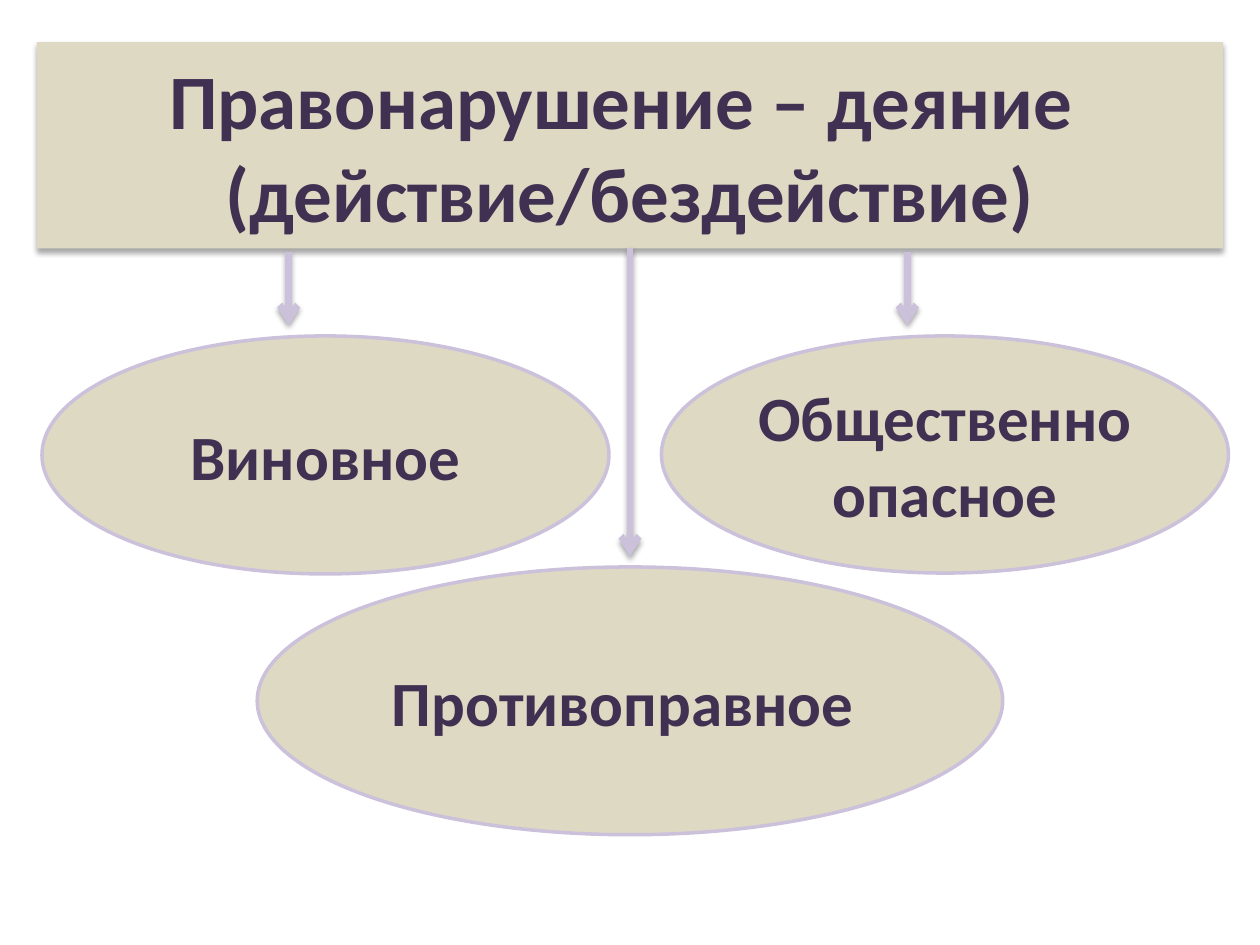
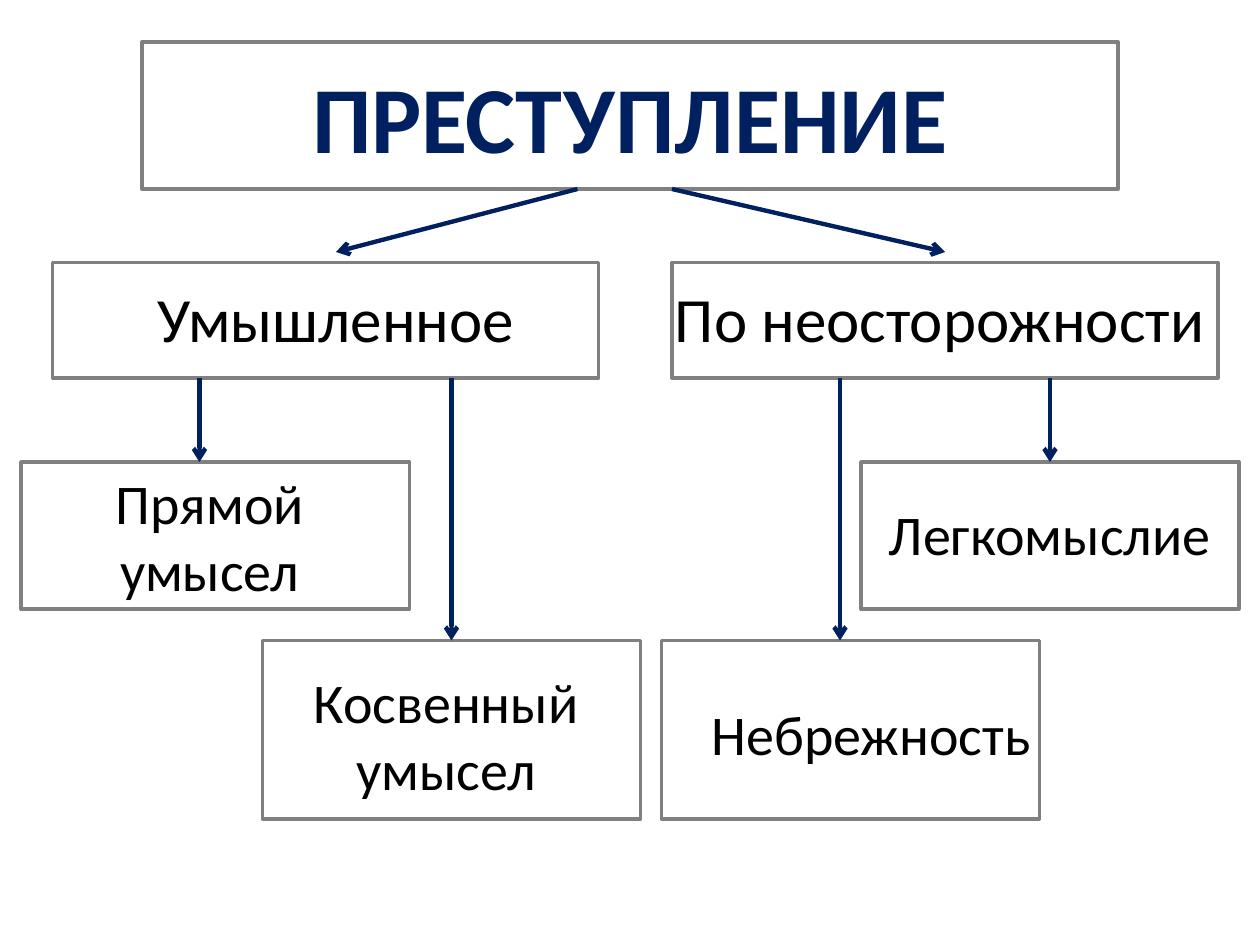
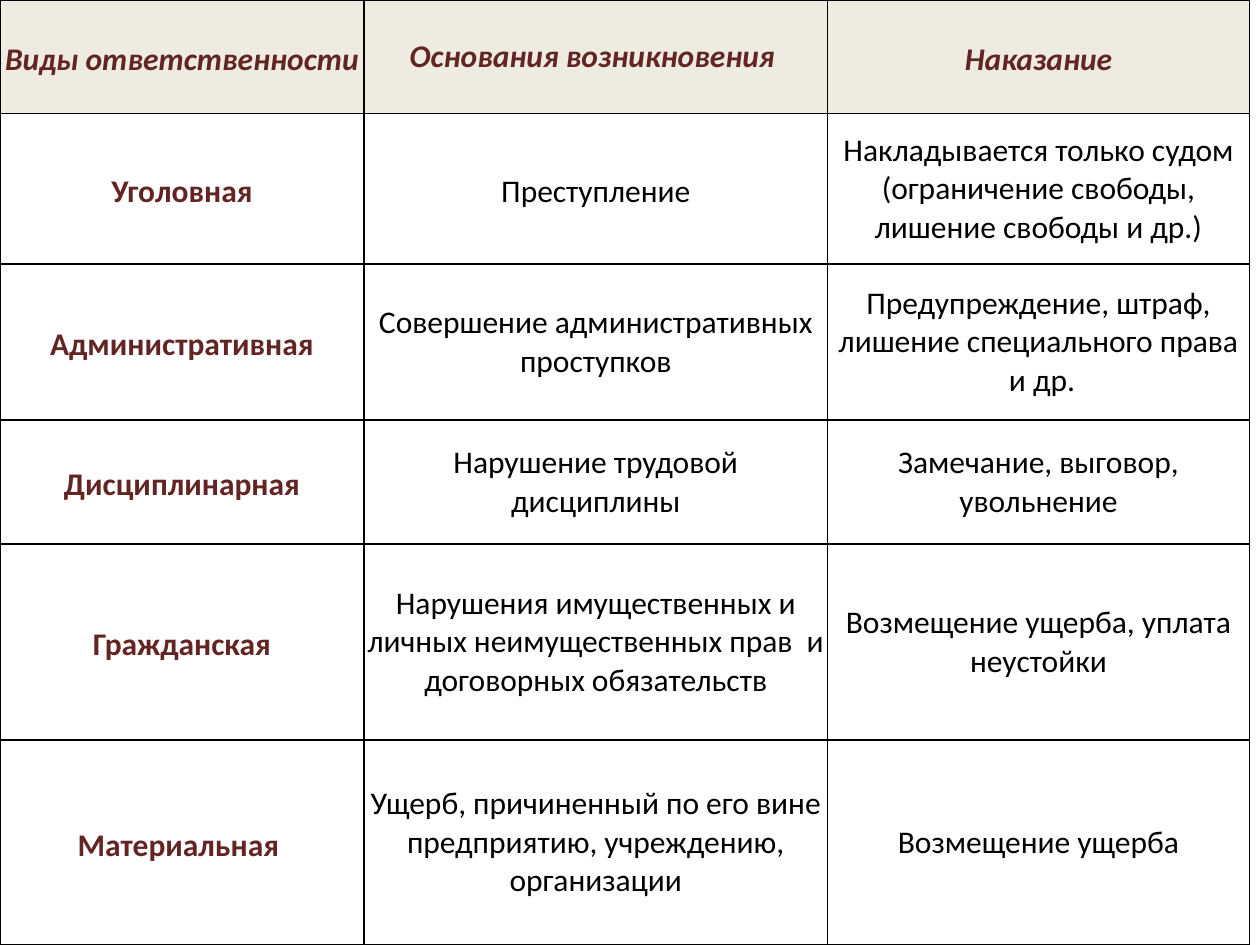
from dataclasses import dataclass
from typing import Any, NamedTuple, Optional

from lxml.etree import SubElement
from pptx import Presentation
from pptx.dml.color import RGBColor
from pptx.enum.shapes import MSO_CONNECTOR, MSO_SHAPE
from pptx.enum.text import MSO_ANCHOR, MSO_AUTO_SIZE, PP_ALIGN
from pptx.oxml.ns import qn
from pptx.util import Pt

COLORS = {
    "sand": "DDD9C3",
    "lilac": "CCC1DA",
    "violet": "403152",
    "navy": "002060",
    "gray": "808080",
    "black": "000000",
    "maroon": "632523",
    "header": "EEECE1",
}
FONT_NAME = "Calibri"
TITLE_ONLY_LAYOUT, BLANK_LAYOUT = 5, 6
TOP, BOTTOM = 0, 2

CENTERED = {"alignment": PP_ALIGN.CENTER}
SPACED = {"line_spacing": 1.15, "space_before": Pt(6.2), "space_after": Pt(6.2)}
FRAME_FORMAT = {
    "word_wrap": True,
    "auto_size": MSO_AUTO_SIZE.NONE,
    "vertical_anchor": MSO_ANCHOR.MIDDLE,
}
LABEL_FORMAT = {
    "word_wrap": True,
    "auto_size": MSO_AUTO_SIZE.SHAPE_TO_FIT_TEXT,
    "vertical_anchor": MSO_ANCHOR.TOP,
}


class Box(NamedTuple):
    left: float
    top: float
    width: float
    height: float


@dataclass
class TextStyle:
    size: float
    color: str
    bold: bool = False
    italic: bool = False


@dataclass
class Look:
    """Fill, outline and shadow of a shape."""
    fill: Optional[str] = None
    line: Optional[str] = None
    line_width: float = 2
    shadow: bool = False


@dataclass
class Arrow:
    start: tuple[float, float]
    end: tuple[float, float]
    source: Any = None
    target: Any = None


@dataclass
class Node:
    """A framed term; the label has a box of its own."""
    text: str
    frame: Box
    label: Box
    size: float


TITLE_LOOK = Look("sand", shadow=True)
OVAL_LOOK = Look("sand", "lilac")
FRAME_LOOK = Look(line="gray")
LILAC_ARROW = Look(line="lilac", line_width=3.75, shadow=True)
NAVY_ARROW = Look(line="navy", line_width=2.5)

FEATURES = [
    ("Общественно опасное", Box(378, 192, 324, 135.5)),
    ("Противоправное ", Box(147, 324, 426, 153)),
    ("Виновное", Box(24, 192, 324, 136)),
]

NODES = [
    Node("Умышленное", Box(30, 150, 312, 66), Box(48, 156, 288, 51), 36),
    Node("По неосторожности", Box(384, 150, 312, 66), Box(366, 156, 342, 51), 36),
    Node("Прямой умысел", Box(12, 264, 222, 84), Box(12, 264, 216, 85), 32),
    Node("Косвенный умысел", Box(150, 366, 216, 102), Box(150, 378, 210, 85), 32),
    Node("Легкомыслие", Box(492, 264, 216, 84), Box(492, 282, 216, 46), 32),
    Node("Небрежность", Box(378, 366, 216, 102), Box(390, 396, 216, 46), 32),
]

COLUMN_WIDTHS = [208, 265, 241]
ROW_HEIGHTS = [65, 86, 89, 71, 112, 117]
LIABILITY = [
    ("Виды ответственности", "Основания возникновения ", "Наказание"),
    ("Уголовная", "Преступление",
     "Накладывается только судом (ограничение свободы, лишение свободы и др.)"),
    ("Административная", "Совершение административных проступков",
     "Предупреждение, штраф, лишение специального права\n и др."),
    ("Дисциплинарная", "Нарушение трудовой дисциплины",
     "Замечание, выговор, увольнение"),
    ("Гражданская",
     "Нарушения имущественных и личных неимущественных прав  и договорных обязательств",
     "Возмещение ущерба, уплата неустойки"),
    ("Материальная ",
     "Ущерб, причиненный по его вине предприятию, учреждению, организации",
     "Возмещение ущерба"),
]
SPACED_CELLS = {(row, 0) for row in range(len(LIABILITY))} | {(0, 2), (1, 1)}
TIGHT_CELLS = {(4, 1), (5, 1)}


def rgb(name: str) -> RGBColor:
    return RGBColor.from_string(COLORS[name])


def points(values) -> list:
    return [Pt(value) for value in values]


def apply_format(target, values: dict) -> None:
    for name, value in values.items():
        setattr(target, name, value)


def write_text(text_frame, text: str, style: TextStyle, paragraph_format=CENTERED) -> None:
    """Write one paragraph for each line of the text."""
    for index, line in enumerate(text.split("\n")):
        paragraph = text_frame.add_paragraph() if index else text_frame.paragraphs[0]
        apply_format(paragraph, paragraph_format)
        run = paragraph.add_run()
        run.text = line
        apply_format(run.font, {"name": FONT_NAME, "size": Pt(style.size),
                                "bold": style.bold, "italic": style.italic})
        run.font.color.rgb = rgb(style.color)


def set_effects(shape, shadow: bool) -> None:
    """Replace the theme's effects by a soft shadow or by nothing."""
    effects = SubElement(shape.element.spPr, qn("a:effectLst"))
    if shadow:
        outer = SubElement(effects, qn("a:outerShdw"), blurRad=str(Pt(3.1)),
                           dist=str(Pt(1.8)), dir="5400000", rotWithShape="0")
        color = SubElement(outer, qn("a:srgbClr"), val=COLORS["black"])
        SubElement(color, qn("a:alpha"), val="35000")


def paint(shape, look: Look) -> None:
    if look.fill:
        shape.fill.solid()
        shape.fill.fore_color.rgb = rgb(look.fill)
    else:
        shape.fill.background()
    if look.line:
        shape.line.color.rgb = rgb(look.line)
        shape.line.width = Pt(look.line_width)
    else:
        shape.line.fill.background()
    set_effects(shape, look.shadow)


def add_title(slide, text: str, box: Box, style: TextStyle, look: Look):
    title = slide.shapes.title
    apply_format(title, dict(zip(Box._fields, points(box))))
    apply_format(title.text_frame, FRAME_FORMAT)
    write_text(title.text_frame, text, style)
    paint(title, look)
    return title


def add_figure(slide, kind: MSO_SHAPE, box: Box, look: Look):
    shape = slide.shapes.add_shape(kind, *points(box))
    apply_format(shape.text_frame, FRAME_FORMAT)
    paint(shape, look)
    return shape


def add_arrow(slide, arrow: Arrow, look: Look) -> None:
    connector = slide.shapes.add_connector(
        MSO_CONNECTOR.STRAIGHT, *points(arrow.start + arrow.end))
    if arrow.source is not None:
        connector.begin_connect(arrow.source, BOTTOM)
    if arrow.target is not None:
        connector.end_connect(arrow.target, TOP)
    connector.line.color.rgb = rgb(look.line)
    connector.line.width = Pt(look.line_width)
    SubElement(connector.element.spPr.find(qn("a:ln")), qn("a:tailEnd"), type="arrow")
    set_effects(connector, look.shadow)


def border_cell(cell) -> None:
    properties = cell._tc.get_or_add_tcPr()
    for index, side in enumerate(("lnL", "lnR", "lnT", "lnB")):
        line = SubElement(properties, qn(f"a:{side}"), w=str(Pt(1)))
        fill = SubElement(line, qn("a:solidFill"))
        SubElement(fill, qn("a:srgbClr"), val=COLORS["black"])
        properties.insert(index, line)


def build_offence_slide(presentation) -> None:
    slide = presentation.slides.add_slide(presentation.slide_layouts[TITLE_ONLY_LAYOUT])
    title = add_title(slide, "Правонарушение – деяние \n(действие/бездействие)",
                      Box(21, 24, 678, 118), TextStyle(44, "violet", bold=True), TITLE_LOOK)
    for arrow in (Arrow((518.5, 144), (518.5, 186)),
                  Arrow((165, 144), (165, 186)),
                  Arrow((360, 142), (360, 318), source=title)):
        add_arrow(slide, arrow, LILAC_ARROW)
    for text, box in FEATURES:
        oval = add_figure(slide, MSO_SHAPE.OVAL, box, OVAL_LOOK)
        write_text(oval.text_frame, text, TextStyle(36, "violet", bold=True))


def build_crime_slide(presentation) -> None:
    slide = presentation.slides.add_slide(presentation.slide_layouts[TITLE_ONLY_LAYOUT])
    add_title(slide, "ПРЕСТУПЛЕНИЕ", Box(81, 24, 558, 84),
              TextStyle(54, "navy", bold=True), FRAME_LOOK)
    frames = {node.text: add_figure(slide, MSO_SHAPE.RECTANGLE, node.frame, FRAME_LOOK)
              for node in NODES}
    for arrow in (Arrow((330, 108), (192, 144)),
                  Arrow((384, 108), (540, 144)),
                  Arrow((114, 216), (114, 264)),
                  Arrow((258, 216), (258, 366), target=frames["Косвенный умысел"]),
                  Arrow((600, 216), (600, 264), target=frames["Легкомыслие"]),
                  Arrow((480, 216), (480, 366))):
        add_arrow(slide, arrow, NAVY_ARROW)
    for node in NODES:
        label = slide.shapes.add_textbox(*points(node.label))
        apply_format(label.text_frame, LABEL_FORMAT)
        write_text(label.text_frame, node.text, TextStyle(node.size, "black"))


def build_liability_slide(presentation) -> None:
    slide = presentation.slides.add_slide(presentation.slide_layouts[BLANK_LAYOUT])
    table = slide.shapes.add_table(
        len(ROW_HEIGHTS), len(COLUMN_WIDTHS),
        *points((0, 0, sum(COLUMN_WIDTHS), sum(ROW_HEIGHTS)))).table
    apply_format(table, {"first_row": False, "horz_banding": False})
    for column, width in zip(table.columns, COLUMN_WIDTHS):
        column.width = Pt(width)
    for row, height in zip(table.rows, ROW_HEIGHTS):
        row.height = Pt(height)
    for row_index, texts in enumerate(LIABILITY):
        for column_index, text in enumerate(texts):
            position = (row_index, column_index)
            is_header = row_index == 0
            is_heading = is_header or column_index == 0
            cell = table.cell(*position)
            margin = Pt(0 if is_heading or position in TIGHT_CELLS else 3.6)
            apply_format(cell, {"vertical_anchor": MSO_ANCHOR.MIDDLE,
                                "margin_left": margin, "margin_right": margin,
                                "margin_top": margin, "margin_bottom": margin})
            if is_header:
                cell.fill.solid()
                cell.fill.fore_color.rgb = rgb("header")
            else:
                cell.fill.background()
            border_cell(cell)
            style = TextStyle(18, "maroon" if is_heading else "black",
                              bold=is_heading, italic=is_header)
            spacing = SPACED if position in SPACED_CELLS else {}
            write_text(cell.text_frame, text, style, CENTERED | spacing)


def main() -> None:
    presentation = Presentation()
    apply_format(presentation, {"slide_width": Pt(720), "slide_height": Pt(540)})
    build_offence_slide(presentation)
    build_crime_slide(presentation)
    build_liability_slide(presentation)
    presentation.save("out.pptx")


if __name__ == "__main__":
    main()
